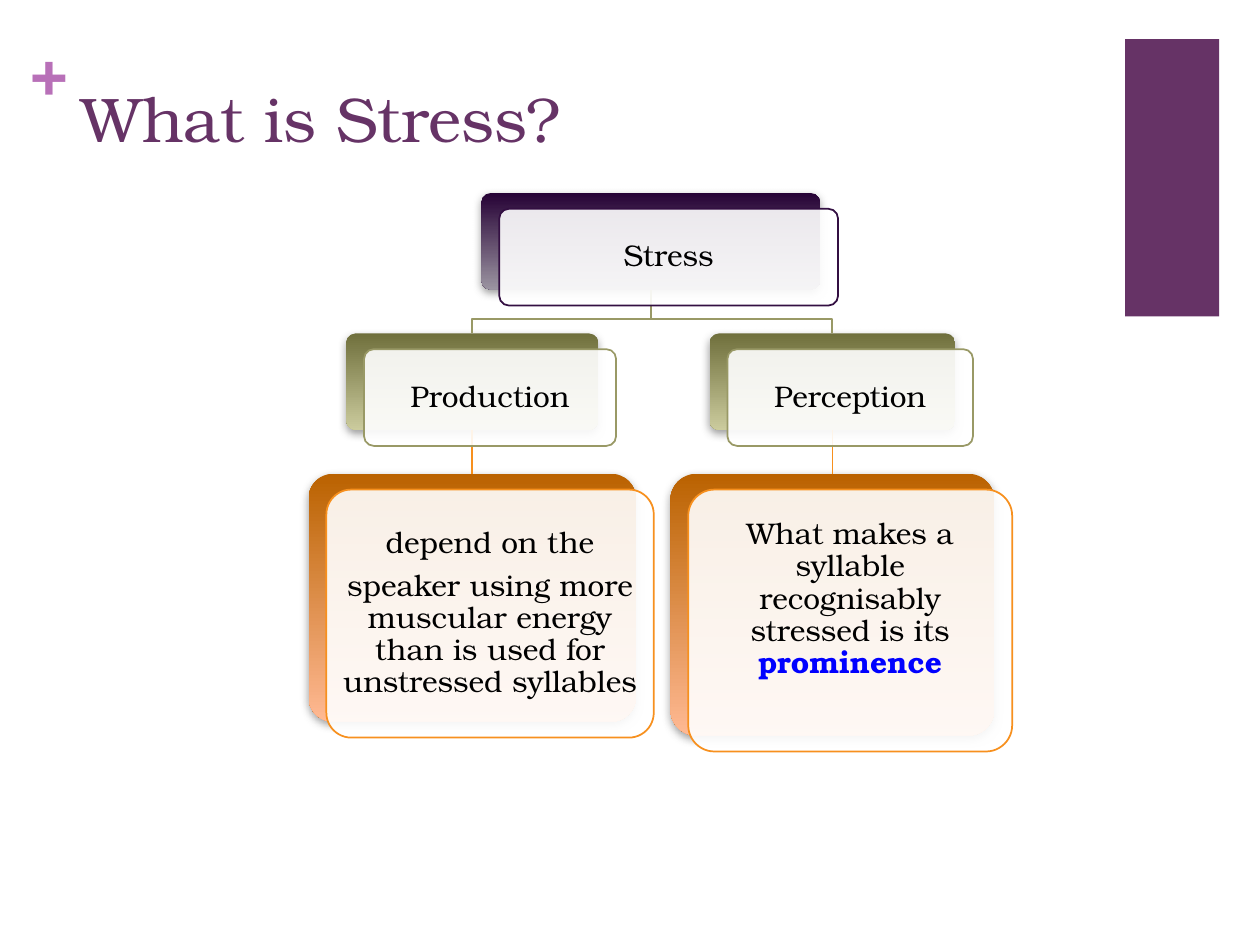
from pptx import Presentation
from pptx.util import Cm, Pt
from pptx.dml.color import RGBColor as Rgb
from pptx.enum.shapes import MSO_SHAPE as Kind, MSO_CONNECTOR as Link
from pptx.enum.text import PP_ALIGN as Align, MSO_ANCHOR as Anchor
from pptx.oxml import parse_xml
from pptx.oxml.ns import qn, nsdecls

HEX = {"plum": "663366", "pink": "B870B8", "ink": "000000", "blue": "0000FF",
       "white": "FFFFFF", "violet": "330F42", "olive": "999966", "orange": "F7901E"}
GRADS = {"violet": ("260235", "9B94A1"), "olive": ("6F6F3C", "CBCB9D"),
         "orange": ("BA6200", "FFB993")}
SHADE = (f'<a:outerShdw {nsdecls("a")} blurRad="63500" dist="25400" dir="5400000" '
         'algn="ctr" rotWithShape="0"><a:srgbClr val="808080"><a:alpha val="75000"/>'
         '</a:srgbClr></a:outerShdw>')
SIDES = ("margin_left", "margin_top", "margin_right", "margin_bottom")


def rgb(name):
    return Rgb.from_string(HEX.get(name, name))


class Deck:
    font = "TeX Gyre Bonum"
    shift = (0.36, 0.32)
    pad = 0.17

    def __init__(self, show):
        self.slide = show.slides.add_slide(show.slide_layouts[6])
        self.shapes = self.slide.shapes

    def fill_text(self, frame, paras, size, pad, form):
        """Fill a frame; each paragraph is a list of (text, colour, bold)."""
        looks = {"word_wrap": True, **{side: Cm(pad) for side in SIDES}}
        for key, val in looks.items():
            setattr(frame, key, val)
        for i, runs in enumerate(paras):
            para = frame.add_paragraph() if i else frame.paragraphs[0]
            for key, val in form.items():
                setattr(para, key, val)
            for text, tint, bold in runs:
                run = para.add_run()
                run.text = text
                for key, val in {"name": self.font, "size": Pt(size), "bold": bold}.items():
                    setattr(run.font, key, val)
                run.font.color.rgb = rgb(tint)

    def label(self, box, runs, pad):
        item = self.shapes.add_textbox(*map(Cm, box))
        self.fill_text(item.text_frame, [runs], 36, pad, {"alignment": Align.LEFT})

    def shape(self, kind, box):
        item = self.shapes.add_shape(kind, *map(Cm, box))
        item.shadow.inherit = False
        if kind == Kind.ROUNDED_RECTANGLE:
            item.adjustments[0] = 0.1
        return item

    def block(self, box, tint):
        item = self.shape(Kind.RECTANGLE, box)
        item.fill.solid()
        item.fill.fore_color.rgb = rgb(tint)
        item.line.fill.background()

    def panel(self, box, tint):
        item = self.shape(Kind.ROUNDED_RECTANGLE, box)
        item.fill.gradient()
        item.fill.gradient_angle = 270
        for stop, shade in zip(item.fill.gradient_stops, GRADS[tint]):
            stop.color.rgb = rgb(shade)
        item.line.fill.background()
        item._element.spPr.find(qn("a:effectLst")).append(parse_xml(SHADE))
        return item

    def card(self, box, tint, paras, foot=0):
        left, top, wide, high = box
        item = self.shape(Kind.ROUNDED_RECTANGLE,
                          (left + self.shift[0], top + self.shift[1], wide, high))
        item.fill.solid()
        item.fill.fore_color.rgb = rgb("white")
        clear = parse_xml(f'<a:alpha {nsdecls("a")} val="90000"/>')
        item._element.spPr.find(qn("a:solidFill"))[0].append(clear)
        self.stroke(item, tint)
        frame = item.text_frame
        frame.vertical_anchor = Anchor.MIDDLE
        self.fill_text(frame, paras, 17, self.pad,
                       {"alignment": Align.CENTER, "line_spacing": 0.9, "space_after": Pt(6)})
        frame.margin_bottom = Cm(self.pad + foot)

    def stroke(self, item, tint):
        item.line.color.rgb = rgb(tint)
        item.line.width = Pt(1)

    def drop(self, upper, lower, tint):
        """Straight link from the bottom of one panel to the top of another."""
        line = self.shapes.add_connector(Link.STRAIGHT, 0, 0, 0, 0)
        line.begin_connect(upper, 2)
        line.end_connect(lower, 0)
        self.stroke(line, tint)
        line._element.spPr.append(parse_xml(f'<a:effectLst {nsdecls("a")}/>'))

    def elbow(self, upper, lower, bend, tint):
        """Branch from the bottom of one panel, turning at height bend."""
        x1, y1 = upper.left + upper.width // 2, upper.top + upper.height
        x2, y2 = lower.left + lower.width // 2, lower.top
        trail = self.shapes.build_freeform(x1, y1)
        trail.add_line_segments([(x1, Cm(bend)), (x2, Cm(bend)), (x2, y2)], close=False)
        item = trail.convert_to_shape()
        item.shadow.inherit = False
        item.fill.background()
        self.stroke(item, tint)


def plain(text):
    return [(text, "ink", False)]


def main():
    show = Presentation()
    show.slide_width, show.slide_height = Cm(25.4), Cm(19.05)
    deck = Deck(show)

    # Frame and title
    deck.block((22.68, 0.79, 1.9, 5.59), "plum")
    deck.label((0.61, 0.64, 0.74, 1.55), [("+", "pink", True)], 0)
    deck.label((1.4, 1.35, 20.98, 3.1), [("What is Stress?", "plum", False)], 0.25)

    # Tree: middle x, row, width, height, colour, text, extra space at the foot
    top, step = 3.89, 2.83
    nodes = {
        "root": (13.12, 0, 6.83, 1.95, "violet", [plain("Stress")], 0),
        "prod": (9.52, 1, 5.08, 1.95, "olive", [plain("Production")], 0),
        "perc": (16.78, 1, 4.95, 1.95, "olive", [plain("Perception")], 0),
        "effort": (9.52, 2, 6.6, 5, "orange", [
            plain("depend on the"),
            plain("speaker using more muscular energy than is used "
                  "for unstressed syllables")], 0),
        "mark": (16.78, 2, 6.53, 5.28, "orange", [
            plain("What makes a syllable recognisably stressed is its ")
            + [("prominence", "blue", True)]], 0.85),
    }
    boxes = {key: (mid - wide / 2, top + row * step, wide, high)
             for key, (mid, row, wide, high, *_) in nodes.items()}
    panels = {key: deck.panel(boxes[key], node[4]) for key, node in nodes.items()}

    # Links, under the cards
    for child, leaf in (("perc", "mark"), ("prod", "effort")):
        deck.drop(panels[child], panels[leaf], "orange")
        deck.elbow(panels["root"], panels[child], 6.43, "olive")

    # Cards with the wording
    for key, node in nodes.items():
        deck.card(boxes[key], *node[4:])

    show.save("out.pptx")


if __name__ == "__main__":
    main()
